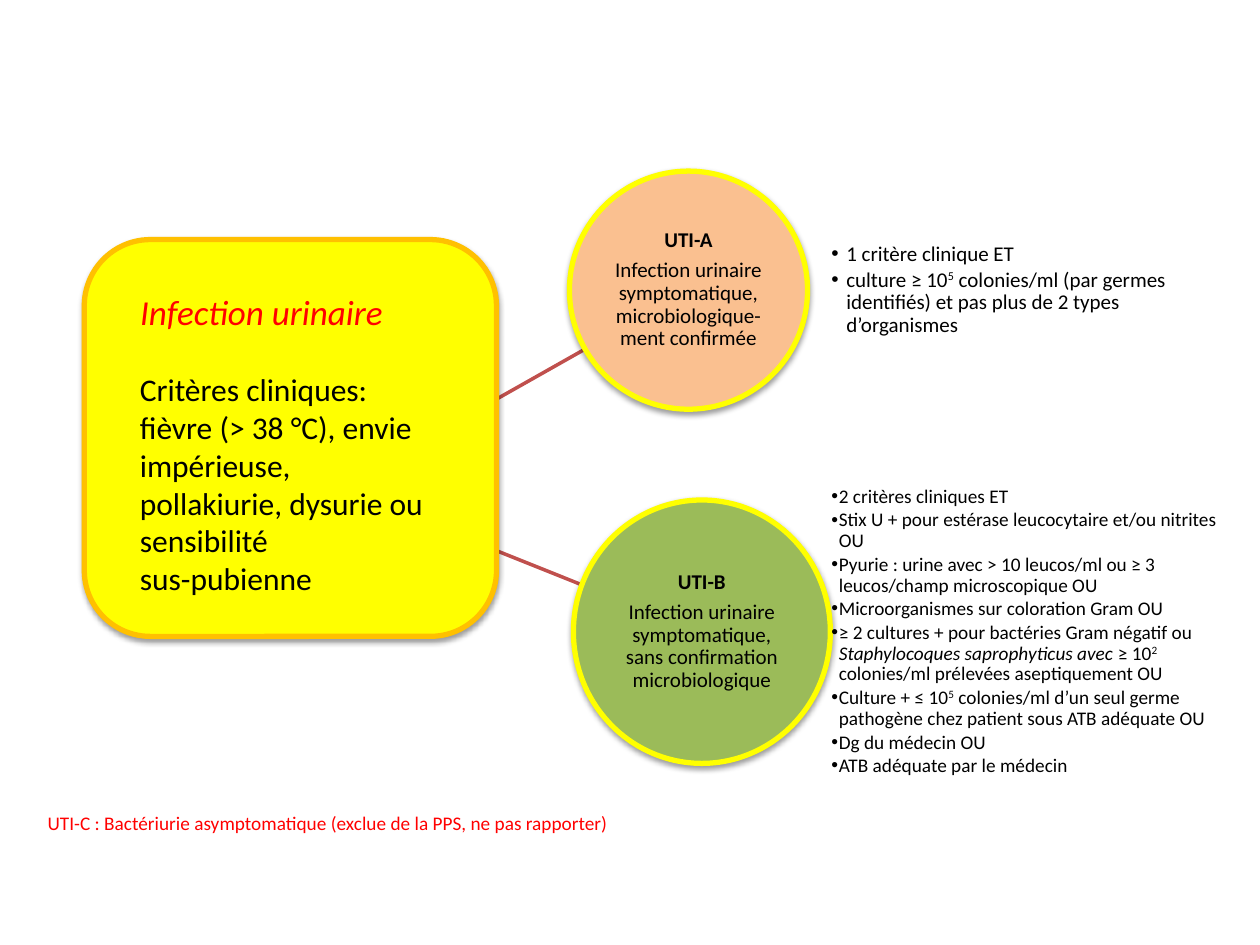
from lxml import etree
from pptx import Presentation
from pptx import util as u
from pptx.dml.color import RGBColor
from pptx.enum import shapes, text
from pptx.oxml.ns import qn

COLORS = {
    "black": "000000", "red": "FF0000", "yellow": "FFFF00", "gold": "FFC000",
    "peach": "FAC090", "green": "9BBB59", "brick": "C0504D",
}
SPAN_STYLES = {"bold": {"bold": True}, "italic": {"italic": True}}
FLUSH = {"margin_left": 0, "margin_right": 0, "margin_top": 0, "margin_bottom": 0}


def rgb(name):
    return RGBColor.from_string(COLORS[name])


def apply(target, values):
    for name, value in values.items():
        setattr(target, name, value)


class Diagram:
    """Holds the shared style and the current slide."""
    font = "Calibri"

    def __init__(self, page):
        self.page = page

    def set_text(self, frame, paragraphs, size, color="black", layout=None,
                 spacing=None, indent=None):
        """Each paragraph is a string or a list of strings and (text, style) pairs."""
        apply(frame, {"word_wrap": True, "auto_size": text.MSO_AUTO_SIZE.NONE,
                      "vertical_anchor": text.MSO_ANCHOR.TOP, **(layout or {})})
        para_format = {"alignment": text.PP_ALIGN.LEFT, "space_before": u.Pt(0),
                       **(spacing or {})}
        for index, content in enumerate(paragraphs):
            para = frame.add_paragraph() if index else frame.paragraphs[0]
            apply(para, para_format)
            if indent:
                hanging = u.Cm(indent)
                properties = para._p.get_or_add_pPr()
                properties.set("marL", str(hanging))
                properties.set("indent", str(-hanging))
            for part in [content] if isinstance(content, str) else content:
                words, style = (part, None) if isinstance(part, str) else part
                span = para.add_run()
                span.text = words
                apply(span.font, {"name": self.font, "size": u.Pt(size),
                                  **SPAN_STYLES.get(style, {})})
                span.font.color.rgb = rgb(color)
                if style == "super":
                    span._r.get_or_add_rPr().set("baseline", "30000")

    def placeholder(self, index, box, paragraphs, size, **options):
        """Moves a template placeholder into place, in front of the shapes."""
        holder = self.page.placeholders[index]
        apply(holder, dict(zip(("left", "top", "width", "height"), map(u.Cm, box))))
        holder.element.getparent().append(holder.element)
        self.set_text(holder.text_frame, paragraphs, size, **options)

    def bullets(self, index, box, paragraphs, size, indent):
        self.placeholder(
            index, box, paragraphs, size, indent=indent,
            layout={**FLUSH, "vertical_anchor": text.MSO_ANCHOR.MIDDLE},
            spacing={"line_spacing": 0.9, "space_after": u.Pt(size * 0.15)})

    def note(self, box, paragraphs, size, color="black"):
        frame = self.page.shapes.add_textbox(*map(u.Cm, box)).text_frame
        self.set_text(frame, paragraphs, size, color)

    def panel(self, kind, box, fill, line):
        shape = self.page.shapes.add_shape(kind, *map(u.Cm, box))
        shape.fill.solid()
        shape.fill.fore_color.rgb = rgb(fill)
        shape.line.color.rgb = rgb(line)
        shape.line.width = u.Pt(3)
        shape.shadow.inherit = False
        effects = shape.element.spPr.find(qn("a:effectLst"))
        shadow = etree.SubElement(effects, qn("a:outerShdw"), blurRad="40000",
                                  dist="20000", dir="5400000", rotWithShape="0")
        tint = etree.SubElement(shadow, qn("a:srgbClr"), val=COLORS["black"])
        etree.SubElement(tint, qn("a:alpha"), val="38000")
        return shape

    def circle(self, box, fill, heading, description):
        shape = self.panel(shapes.MSO_SHAPE.OVAL, box, fill, "yellow")
        self.set_text(
            shape.text_frame, [[(heading, "bold")], description], 12,
            layout={**dict.fromkeys(FLUSH, u.Cm(0.03)),
                    "vertical_anchor": text.MSO_ANCHOR.MIDDLE},
            spacing={"alignment": text.PP_ALIGN.CENTER, "line_spacing": 0.9,
                     "space_after": u.Pt(4.2)})

    def link(self, *ends):
        line = self.page.shapes.add_connector(
            shapes.MSO_CONNECTOR.STRAIGHT, *map(u.Cm, ends))
        line.line.color.rgb = rgb("brick")
        line.line.width = u.Pt(2)
        etree.SubElement(line.element.spPr, qn("a:effectLst"))


def main():
    deck = Presentation()
    deck.slide_width, deck.slide_height = u.Cm(25.4), u.Cm(19.05)
    diagram = Diagram(deck.slides.add_slide(deck.slide_layouts[3]))

    # Links from the infection to its two categories
    diagram.link(9.63, 10.95, 11.73, 11.79)
    diagram.link(9.63, 8.26, 11.79, 7.04)

    # Clinical criteria
    diagram.panel(shapes.MSO_SHAPE.ROUNDED_RECTANGLE, (1.7, 4.83, 8.31, 8),
                  "yellow", "gold")
    diagram.placeholder(0, (2.57, 5.72, 6.4, 1.1),
                        [[("Infection urinaire", "italic")]], 20, color="red")
    diagram.note((2.57, 7.34, 6.4, 4.9), [
        "Critères cliniques:",
        "fièvre (> 38 °C), envie impérieuse, pollakiurie, dysurie ou sensibilité",
        "sus-pubienne",
    ], 18)

    # UTI-A
    diagram.circle((11.48, 3.45, 4.8, 4.8), "peach", "UTI-A",
                   "Infection urinaire symptomatique, microbiologique-ment confirmée")
    diagram.bullets(1, (16.76, 3.45, 7.21, 4.8), [
        "1 critère clinique ET",
        ["culture ≥ 10", ("5", "super"),
         " colonies/ml (par germes identifiés) et pas plus de 2 types d’organismes"],
    ], 12, indent=0.3)

    # UTI-B
    diagram.circle((11.56, 10.08, 5.18, 5.31), "green", "UTI-B",
                   "Infection urinaire symptomatique, sans confirmation microbiologique")
    diagram.bullets(2, (16.76, 10.08, 7.77, 5.31), [
        "2 critères cliniques ET",
        "Stix U + pour estérase leucocytaire et/ou nitrites OU",
        "Pyurie : urine avec > 10 leucos/ml ou ≥ 3 leucos/champ microscopique OU",
        "Microorganismes sur coloration Gram OU",
        ["≥ 2 cultures + pour bactéries Gram négatif ou ",
         ("Staphylocoques saprophyticus avec ", "italic"), "≥ 10", ("2", "super"),
         " colonies/ml prélevées aseptiquement OU"],
        ["Culture + ≤ 10", ("5", "super"),
         " colonies/ml d’un seul germe pathogène chez patient sous ATB adéquate OU"],
        "Dg du médecin OU",
        "ATB adéquate par le médecin",
    ], 11, indent=0.15)

    # UTI-C remark
    diagram.note((0.71, 16.23, 13.59, 0.74), [
        "UTI-C : Bactériurie asymptomatique (exclue de la PPS, ne pas rapporter)",
    ], 11, "red")

    deck.save("out.pptx")


if __name__ == "__main__":
    main()
